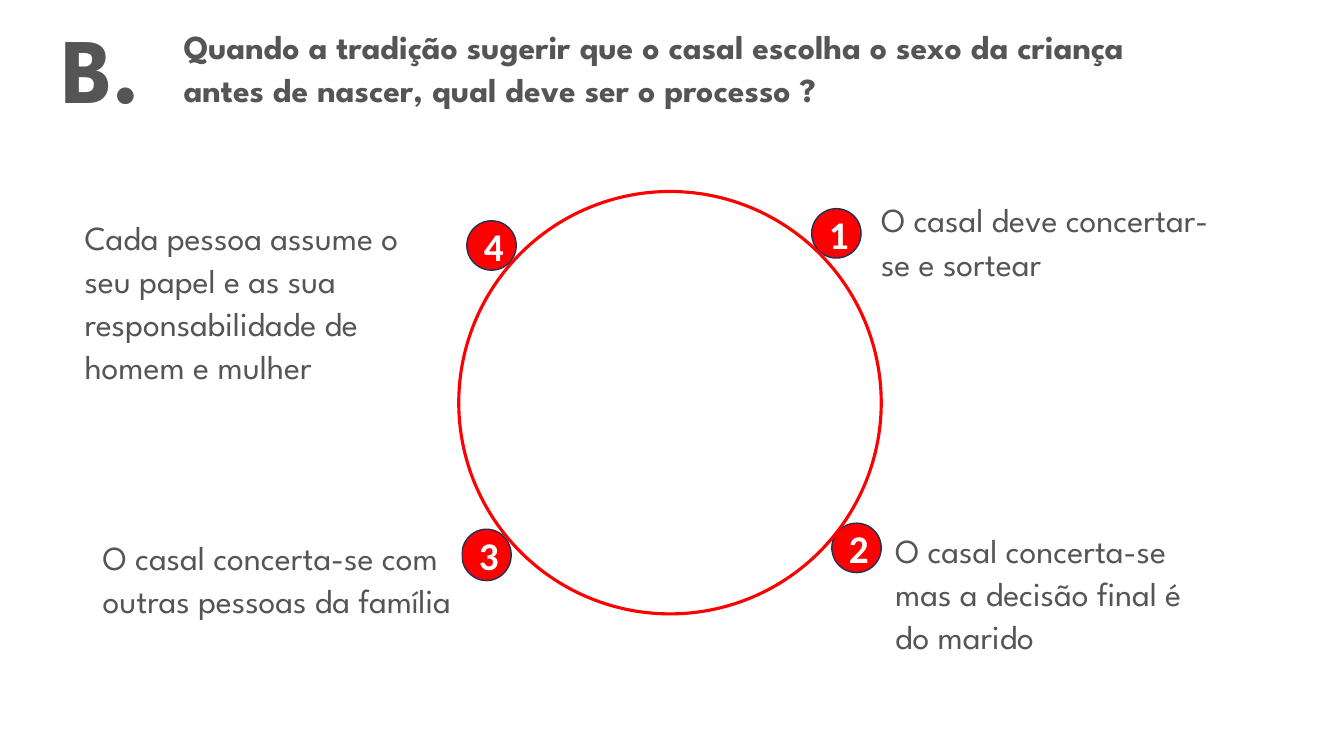
from dataclasses import dataclass

from pptx import Presentation
from pptx.dml.color import RGBColor
from pptx.enum import shapes, text
from pptx.util import Inches, Pt


@dataclass(frozen=True)
class Theme:
    grey: RGBColor = RGBColor(0x55, 0x55, 0x55)
    red: RGBColor = RGBColor(0xFF, 0x00, 0x00)
    navy: RGBColor = RGBColor(0x1E, 0x32, 0x56)
    white: RGBColor = RGBColor(0xFF, 0xFF, 0xFF)
    font: str = "League Spartan"
    badge_font: str = "Calibri"
    body_size: int = 24
    badge_size: int = 28
    letter_size: int = 66


theme = Theme()


def write(shape, wording, size=theme.body_size, font=theme.font, color=theme.grey,
          bold=False, align=text.PP_ALIGN.LEFT, anchor=text.MSO_ANCHOR.TOP,
          line_spacing=1.07, space_after=8):
    frame = shape.text_frame
    frame.text = wording
    frame.word_wrap = True
    frame.auto_size = text.MSO_AUTO_SIZE.NONE
    frame.vertical_anchor = anchor
    paragraph = frame.paragraphs[0]
    paragraph.alignment = align
    paragraph.line_spacing = line_spacing
    paragraph.space_before = Pt(0)
    paragraph.space_after = Pt(space_after)
    run_font = paragraph.runs[0].font
    run_font.name, run_font.size, run_font.bold = font, Pt(size), bold
    run_font.color.rgb = color


def add_figure(preset, box, fill=None, line=None, line_width=1):
    shape = slide.shapes.add_shape(preset, *map(Inches, box))
    shape.shadow.inherit = False
    if fill is None:
        shape.fill.background()
    else:
        shape.fill.solid()
        shape.fill.fore_color.rgb = fill
    if line is None:
        shape.line.fill.background()
    else:
        shape.line.color.rgb = line
        shape.line.width = Pt(line_width)
    return shape


presentation = Presentation()
presentation.slide_width = Inches(13.33)
presentation.slide_height = Inches(7.5)
slide = presentation.slides.add_slide(presentation.slide_layouts[5])

# Question
title = slide.shapes.title
title.left, title.top, title.width, title.height = map(Inches, (1.72, 0.18, 9.71, 0.96))
write(title, "Quando a tradição sugerir que o casal escolha o sexo da criança "
             "antes de nascer, qual deve ser o processo ?", bold=True)

# Numbered badges
badges = [
    ("1", (8.05, 2.07, 0.49, 0.49)),
    ("4", (4.63, 2.19, 0.49, 0.49)),
    ("3", (4.58, 5.25, 0.49, 0.51)),
    ("2", (8.25, 5.19, 0.49, 0.49)),
]
for number, box in badges:
    badge = add_figure(shapes.MSO_SHAPE.OVAL, box, fill=theme.red, line=theme.navy)
    write(badge, number, size=theme.badge_size, font=theme.badge_font, color=theme.white,
          bold=True, align=text.PP_ALIGN.CENTER, anchor=text.MSO_ANCHOR.MIDDLE,
          line_spacing=1.0, space_after=0)

# Answers
answers = [
    ("Cada pessoa assume o seu papel e as sua responsabilidade de homem e mulher",
     (0.74, 2.07, 3.77, 1.82)),
    ("O casal deve concertar-se e sortear", (8.64, 1.9, 3.52, 0.96)),
    ("O casal concerta-se mas a decisão final é do marido", (8.78, 5.18, 3.3, 1.39)),
    ("O casal concerta-se com outras pessoas da família", (0.92, 5.25, 3.66, 1.39)),
]
for wording, box in answers:
    write(add_figure(shapes.MSO_SHAPE.RECTANGLE, box, fill=theme.white), wording)

# Question letter
letter = slide.shapes.add_textbox(*map(Inches, (0.51, 0.06, 1.29, 1.21)))
write(letter, "B.", size=theme.letter_size, bold=True, line_spacing=1.0, space_after=0)

# Ring
add_figure(shapes.MSO_SHAPE.OVAL, (4.55, 1.9, 4.19, 4.19), line=theme.red, line_width=2.25)

presentation.save("out.pptx")
